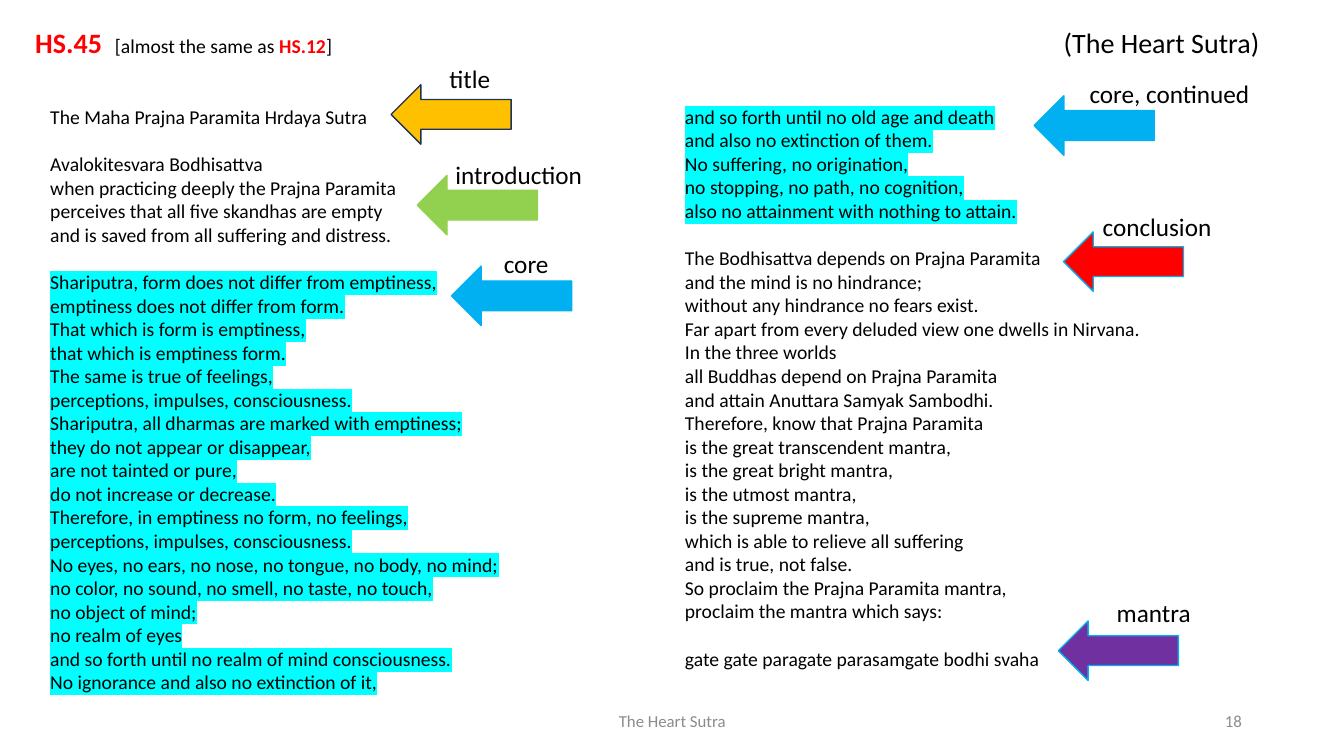
from lxml import etree
from pptx import Presentation
from pptx import util as u
from pptx.dml.color import RGBColor
from pptx.enum import shapes, text
from pptx.oxml import ns

BLACK = RGBColor(0x00, 0x00, 0x00)
GRAY = RGBColor(0x8C, 0x8C, 0x8C)
NAVY = RGBColor(0x1E, 0x32, 0x56)
GOLD = RGBColor(0xFF, 0xC0, 0x00)
GREEN = RGBColor(0x92, 0xD0, 0x50)
BLUE = RGBColor(0x00, 0xB0, 0xF0)
RED = RGBColor(0xFF, 0x00, 0x00)
PURPLE = RGBColor(0x70, 0x30, 0xA0)
CYAN = RGBColor(0x00, 0xFF, 0xFF)

STANZAS = [
    (["The Maha Prajna Paramita Hrdaya Sutra"], None),
    (["Avalokitesvara Bodhisattva",
      "when practicing deeply the Prajna Paramita",
      "perceives that all five skandhas are empty",
      "and is saved from all suffering and distress."], None),
    (["Shariputra, form does not differ from emptiness,",
      "emptiness does not differ from form.",
      "That which is form is emptiness,",
      "that which is emptiness form.",
      "The same is true of feelings,",
      "perceptions, impulses, consciousness.",
      "Shariputra, all dharmas are marked with emptiness;",
      "they do not appear or disappear,",
      "are not tainted or pure,",
      "do not increase or decrease.",
      "Therefore, in emptiness no form, no feelings,",
      "perceptions, impulses, consciousness.",
      "No eyes, no ears, no nose, no tongue, no body, no mind;",
      "no color, no sound, no smell, no taste, no touch,",
      "no object of mind;",
      "no realm of eyes",
      "and so forth until no realm of mind consciousness.",
      "No ignorance and also no extinction of it,",
      "and so forth until no old age and death",
      "and also no extinction of them.",
      "No suffering, no origination,",
      "no stopping, no path, no cognition,",
      "also no attainment with nothing to attain."], CYAN),
    (["The Bodhisattva depends on Prajna Paramita",
      "and the mind is no hindrance;",
      "without any hindrance no fears exist.",
      "Far apart from every deluded view one dwells in Nirvana.",
      "In the three worlds",
      "all Buddhas depend on Prajna Paramita",
      "and attain Anuttara Samyak Sambodhi.",
      "Therefore, know that Prajna Paramita",
      "is the great transcendent mantra,",
      "is the great bright mantra,",
      "is the utmost mantra,",
      "is the supreme mantra,",
      "which is able to relieve all suffering",
      "and is true, not false.",
      "So proclaim the Prajna Paramita mantra,",
      "proclaim the mantra which says:"], None),
    (["gate gate paragate parasamgate bodhi svaha"], None),
]

SECTIONS = [
    ("title", (32.7, 7.73, 7.28), (29.1, 11.2), GOLD, NAVY),
    ("introduction", (33.15, 20.4, 11.25), (31.05, 23.2), GREEN, GREEN),
    ("core", (36.75, 32.13, 6.38), (33.6, 35.2), BLUE, BLUE),
    ("core, continued", (80.33, 9.73, 14.33), (76.95, 12.67), BLUE, BLUE),
    ("conclusion", (81.3, 27.33, 10.2), (79.13, 30.67), RED, BLUE),
    ("mantra", (82.35, 78.4, 8.33), (78.75, 82.13), PURPLE, BLUE),
]


def add_span(para, words, size=14, color=BLACK, bold=False, highlight=None):
    span = para.add_run()
    span.text = words
    span.font.size = u.Pt(size)
    span.font.bold = bold
    span.font.color.rgb = color
    span.font.name = "Calibri"
    if highlight is not None:
        mark = etree.Element(ns.qn("a:highlight"))
        etree.SubElement(mark, ns.qn("a:srgbClr"), val=str(highlight))
        span.font._element.find(ns.qn("a:solidFill")).addnext(mark)


class SutraSlide:
    """Draws annotated verse on one slide, with lengths in percent of its size."""

    def __init__(self, deck):
        self.deck = deck
        self.page = deck.slides.add_slide(deck.slide_layouts[6])

    def place(self, left, top, width, height):
        wide, high = self.deck.slide_width / 100, self.deck.slide_height / 100
        return (u.Emu(round(left * wide)), u.Emu(round(top * high)),
                u.Emu(round(width * wide)), u.Emu(round(height * high)))

    def frame(self, *area):
        box = self.page.shapes.add_textbox(*self.place(*area)).text_frame
        box.word_wrap = True
        return box

    def label(self, words, *area, align=text.PP_ALIGN.LEFT,
              anchor=text.MSO_ANCHOR.TOP, **style):
        box = self.frame(*area)
        box.vertical_anchor = anchor
        box.paragraphs[0].alignment = align
        add_span(box.paragraphs[0], words, **style)

    def arrow(self, left, top, fill, line):
        arrow = self.page.shapes.add_shape(
            shapes.MSO_SHAPE.LEFT_ARROW, *self.place(left, top, 8.93, 7.87))
        arrow.shadow.inherit = False
        arrow.fill.solid()
        arrow.fill.fore_color.rgb = fill
        arrow.line.color.rgb = line
        arrow.line.width = u.Pt(1)

    def verse(self, stanzas, *area):
        box = self.frame(*area)
        box._txBody.bodyPr.set("numCol", "2")
        para = None
        for stanza, highlight in stanzas:
            for index, line in enumerate(stanza):
                first = para is None
                para = box.paragraphs[0] if first else box.add_paragraph()
                if index == 0 and not first:
                    para.space_before = u.Pt(17)
                add_span(para, line, highlight=highlight)

    def heading(self, spans, stops, *area):
        para = self.frame(*area).paragraphs[0]
        para.line_spacing = 1.07
        para.space_after = u.Pt(8)
        tabs = etree.SubElement(para._p.get_or_add_pPr(), ns.qn("a:tabLst"))
        for stop in stops:
            etree.SubElement(tabs, ns.qn("a:tab"), pos=str(u.Inches(stop)), algn="l")
        for words, style in spans:
            add_span(para, words, **style)


def main():
    deck = Presentation()
    deck.slide_width, deck.slide_height = u.Inches(13.33), u.Inches(7.5)
    sutra = SutraSlide(deck)
    footer = dict(size=12, color=GRAY, anchor=text.MSO_ANCHOR.MIDDLE)
    sutra.label("The Heart Sutra", 33.15, 92.67, 33.75, 5.33,
                align=text.PP_ALIGN.CENTER, **footer)
    sutra.label("18", 70.65, 92.67, 22.5, 5.33,
                align=text.PP_ALIGN.RIGHT, **footer)
    sutra.verse(STANZAS, 3, 13.2, 95.93, 80.93)
    for name, label_area, arrow_corner, fill, line in SECTIONS:
        sutra.arrow(*arrow_corner, fill, line)
        sutra.label(name, *label_area, 5.33, size=18)
    sutra.heading([
        ("HS.45", dict(size=20, color=RED, bold=True)),
        ("\t[almost the same as ", {}),
        ("HS.12", dict(color=RED, bold=True)),
        ("]", {}),
        ("\t", dict(size=28)),
        ("(The Heart Sutra)", dict(size=20)),
    ], (0.79, 10.2), 1.88, 0.8, 97.05, 7.73)
    deck.save("out.pptx")


if __name__ == "__main__":
    main()
